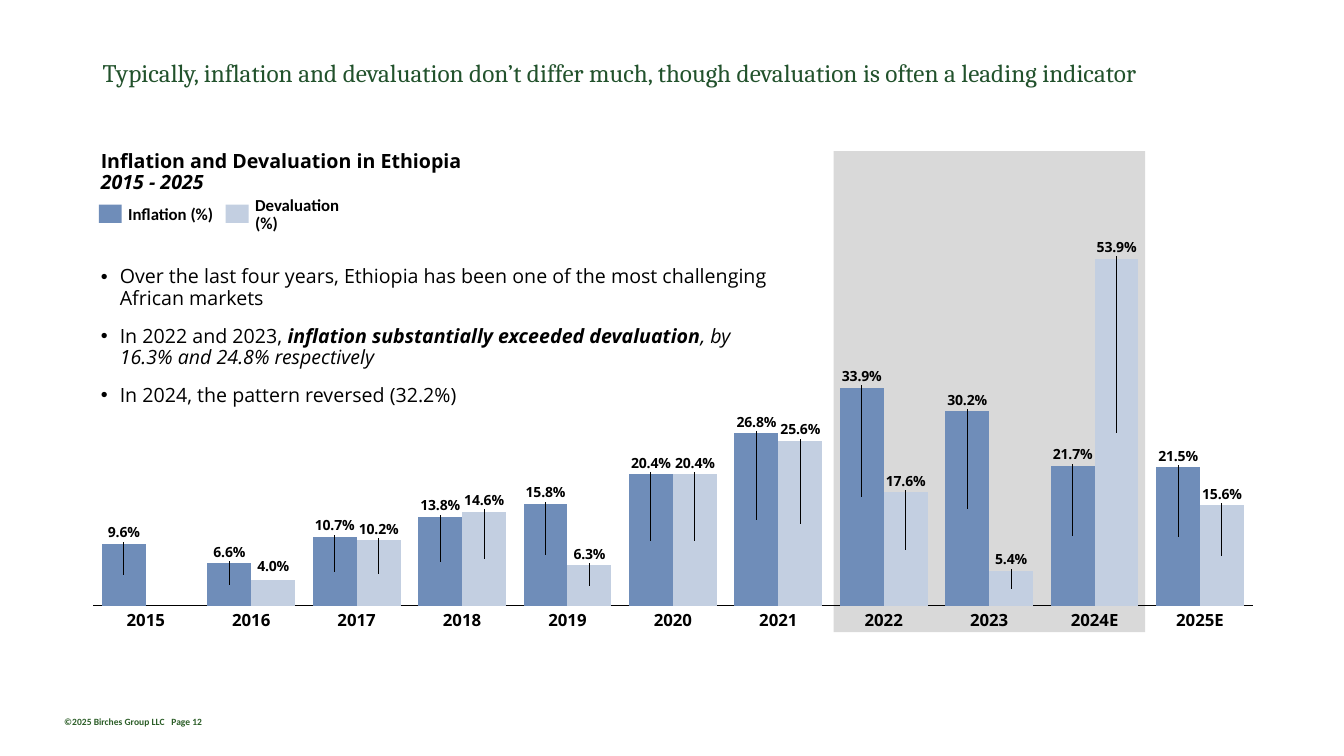
from lxml import etree
from pptx import Presentation
from pptx.chart.data import CategoryChartData
from pptx.dml.color import RGBColor
from pptx.enum.chart import XL_CHART_TYPE as ChartType, XL_LABEL_POSITION as LabelPosition
from pptx.enum.chart import XL_TICK_LABEL_POSITION as TickLabels, XL_TICK_MARK as TickMark
from pptx.enum.shapes import MSO_SHAPE as Shape
from pptx.enum.text import MSO_ANCHOR as Anchor, PP_ALIGN as Align
from pptx.oxml import parse_xml
from pptx.oxml.ns import nsdecls, qn
from pptx.util import Cm, Pt

BLACK = RGBColor(0x00, 0x00, 0x00)
GREY = RGBColor(0xD9, 0xD9, 0xD9)
TITLE_GREEN = RGBColor(0x22, 0x52, 0x2C)
FOOTER_GREEN = RGBColor(0x2C, 0x5E, 0x28)
BLUE = RGBColor(0x6F, 0x8D, 0xB9)
PALE_BLUE = RGBColor(0xC3, 0xCF, 0xE1)

TITLE = "Typically, inflation and devaluation don’t differ much, though devaluation is often a leading indicator"
FOOTER = "©2025 Birches Group LLC\tPage 12"
HEADING = [
    [("Inflation and Devaluation in Ethiopia", True, False)],
    [("2015 - 2025", True, True)],
]
BULLETS = [
    [("Over the last four years, Ethiopia has been one of the most challenging African markets", False, False)],
    [("In 2022 and 2023, ", False, False),
     ("inflation substantially exceeded devaluation", True, True),
     (", by 16.3% and 24.8% respectively", False, True)],
    [("In 2024, the pattern reversed (32.2%)", False, False)],
]
YEARS = ["2015", "2016", "2017", "2018", "2019", "2020", "2021", "2022", "2023", "2024E", "2025E"]
SERIES = [
    ("Inflation (%)", BLUE, 2.49,
     [9.6, 6.6, 10.7, 13.8, 15.8, 20.4, 26.8, 33.9, 30.2, 21.7, 21.5]),
    ("Devaluation (%)", PALE_BLUE, 5.69,
     [None, 4.0, 10.2, 14.6, 6.3, 20.4, 25.6, 17.6, 5.4, 53.9, 15.6]),
]

CHART_LEFT, CHART_TOP, CHART_WIDTH, CHART_HEIGHT = 2.11, 5.61, 29.67, 10.29
PLOT_X, PLOT_Y, PLOT_W, PLOT_H = 0.008, 0.087, 0.985, 0.852
AXIS_MAX = 54
LABEL_RISE = 0.028
SHORT_BAR = 5


def add_rectangle(page, left, top, width, height, color):
    box = page.shapes.add_shape(Shape.RECTANGLE, Cm(left), Cm(top), Cm(width), Cm(height))
    box.shadow.inherit = False
    box.fill.solid()
    box.fill.fore_color.rgb = color
    box.line.fill.background()


def set_font(font, name, size, color, bold=False, italic=False):
    font.name, font.size, font.bold, font.italic = name, Pt(size), bold, italic
    font.color.rgb = color


def add_text(page, place, paragraphs, font, size, color=BLACK, insets=(0, 0, 0, 0),
             wrap=False, anchor=Anchor.TOP, align=Align.LEFT, spacing=0.9):
    box = page.shapes.add_textbox(*[Cm(length) for length in place])
    frame = box.text_frame
    frame.word_wrap = wrap
    frame.vertical_anchor = anchor
    frame.margin_left, frame.margin_top, frame.margin_right, frame.margin_bottom = map(Cm, insets)
    for index, spans in enumerate(paragraphs):
        para = frame.add_paragraph() if index else frame.paragraphs[0]
        para.alignment = align
        para.line_spacing = spacing
        for text, bold, italic in spans:
            span = para.add_run()
            span.text = text
            set_font(span.font, font, size, color, bold, italic)
    return frame


def manual_layout(**values):
    layout = parse_xml(f"<c:layout {nsdecls('c')}><c:manualLayout/></c:layout>")
    for tag, value in values.items():
        etree.SubElement(layout[0], qn(f"c:{tag}")).set("val", str(value))
    return layout


def label_bars(series, values):
    labels = series.data_labels
    labels.show_value = True
    labels.number_format = '0.0"%"'
    labels.number_format_is_linked = False
    labels.position = LabelPosition.OUTSIDE_END
    set_font(labels.font, "Open Sans", 10, BLACK, True)
    for index, value in enumerate(values):
        if value is None or value < SHORT_BAR:
            continue
        label = series.points[index].data_label
        set_font(label.font, "Open Sans", 10, BLACK, True)
        label.position = LabelPosition.CENTER
        rise = value / AXIS_MAX * PLOT_H / 2 + LABEL_RISE
        element = labels._element.findall(qn("c:dLbl"))[-1]
        element.find(qn("c:idx")).addnext(manual_layout(x=0, y=round(-rise, 4)))
    labels._element.append(parse_xml(
        f"<c:extLst {nsdecls('c')}><c:ext uri=\"{{CE6537A1-D6FC-4f65-9D91-7224C49458BB}}\" "
        "xmlns:c15=\"http://schemas.microsoft.com/office/drawing/2012/chart\">"
        "<c15:showLeaderLines val=\"1\"/></c:ext></c:extLst>"))


def add_bar_chart(page):
    data = CategoryChartData(number_format='0.0"%"')
    data.categories = YEARS
    for name, color, left, values in SERIES:
        data.add_series(name, values)
    place = [Cm(length) for length in (CHART_LEFT, CHART_TOP, CHART_WIDTH, CHART_HEIGHT)]
    chart = page.shapes.add_chart(ChartType.COLUMN_CLUSTERED, *place, data).chart
    chart.has_legend = False
    chart.has_title = False
    set_font(chart.font, "Calibri", 10, BLACK)
    years, percent = chart.category_axis, chart.value_axis
    years.tick_label_position = TickLabels.NONE
    years.major_tick_mark = years.minor_tick_mark = TickMark.NONE
    years.format.line.color.rgb = BLACK
    years.format.line.width = Pt(0.75)
    percent.minimum_scale, percent.maximum_scale = 0, AXIS_MAX
    percent.has_major_gridlines = False
    percent.visible = False
    plot = chart.plots[0]
    plot.gap_width, plot.overlap, plot.vary_by_categories = 40, 0, False
    for series, (name, color, left, values) in zip(plot.series, SERIES):
        series.format.fill.solid()
        series.format.fill.fore_color.rgb = color
        label_bars(series, values)
    area = chart._chartSpace.chart.plotArea
    for layout in area.findall(qn("c:layout")):
        area.remove(layout)
    area.insert(0, manual_layout(layoutTarget="inner", xMode="edge", yMode="edge",
                                 x=PLOT_X, y=PLOT_Y, w=PLOT_W, h=PLOT_H))


def main():
    deck = Presentation()
    deck.slide_width, deck.slide_height = Cm(33.87), Cm(19.05)
    page = deck.slides.add_slide(deck.slide_layouts[6])

    footer = add_text(page, (1.37, 17.91, 7.67, 0.53), [[(FOOTER, True, False)]], "Calibri", 6.8,
                      FOOTER_GREEN, (0.25, 0.13, 0.25, 0.13), True, spacing=1.0)
    properties = footer.paragraphs[0]._p.get_or_add_pPr()
    tabs = etree.SubElement(properties, qn("a:tabLst"))
    etree.SubElement(tabs, qn("a:tab"), pos=str(Cm(2.7)), algn="l")

    add_rectangle(page, 21.01, 3.81, 7.85, 12.12, GREY)
    add_text(page, (2.34, 1.02, 29.21, 1.7), [[(TITLE, False, False)]], "Cambria", 18,
             TITLE_GREEN, (0.25, 0.13, 0.25, 0.13), True, Anchor.MIDDLE)
    add_bar_chart(page)

    step = CHART_WIDTH * PLOT_W / len(YEARS)
    for index, year in enumerate(YEARS):
        width = 1.24 if year.endswith("E") else 1.02
        center = CHART_LEFT + CHART_WIDTH * PLOT_X + (index + 0.5) * step
        add_text(page, (center - width / 2, 15.42, width, 0.46), [[(year, True, False)]],
                 "Open Sans", 12, align=Align.CENTER)

    add_text(page, (2.34, 3.81, 29.21, 1.5), HEADING, "Open Sans", 14, insets=(0.2, 0, 0, 0.41))
    for name, color, left, values in SERIES:
        add_rectangle(page, left, 5.16, 0.58, 0.46, color)
        add_text(page, (left + 0.74, 5.18, 2.5, 0.46), [[(name, True, False)]],
                 "Calibri", 12, anchor=Anchor.MIDDLE)

    bullets = add_text(page, (2.34, 6.53, 17.53, 3.99), BULLETS, "Open Sans", 14,
                       insets=(0.2, 0.2, 0.03, 0.28), wrap=True)
    for para in bullets.paragraphs:
        para.space_after = Pt(12)
        properties = para._p.get_or_add_pPr()
        properties.set("marL", str(Cm(0.48)))
        properties.set("indent", str(-Cm(0.48)))
        etree.SubElement(properties, qn("a:buFont"), typeface="Arial")
        etree.SubElement(properties, qn("a:buChar"), char="•")

    deck.save("out.pptx")


if __name__ == "__main__":
    main()
